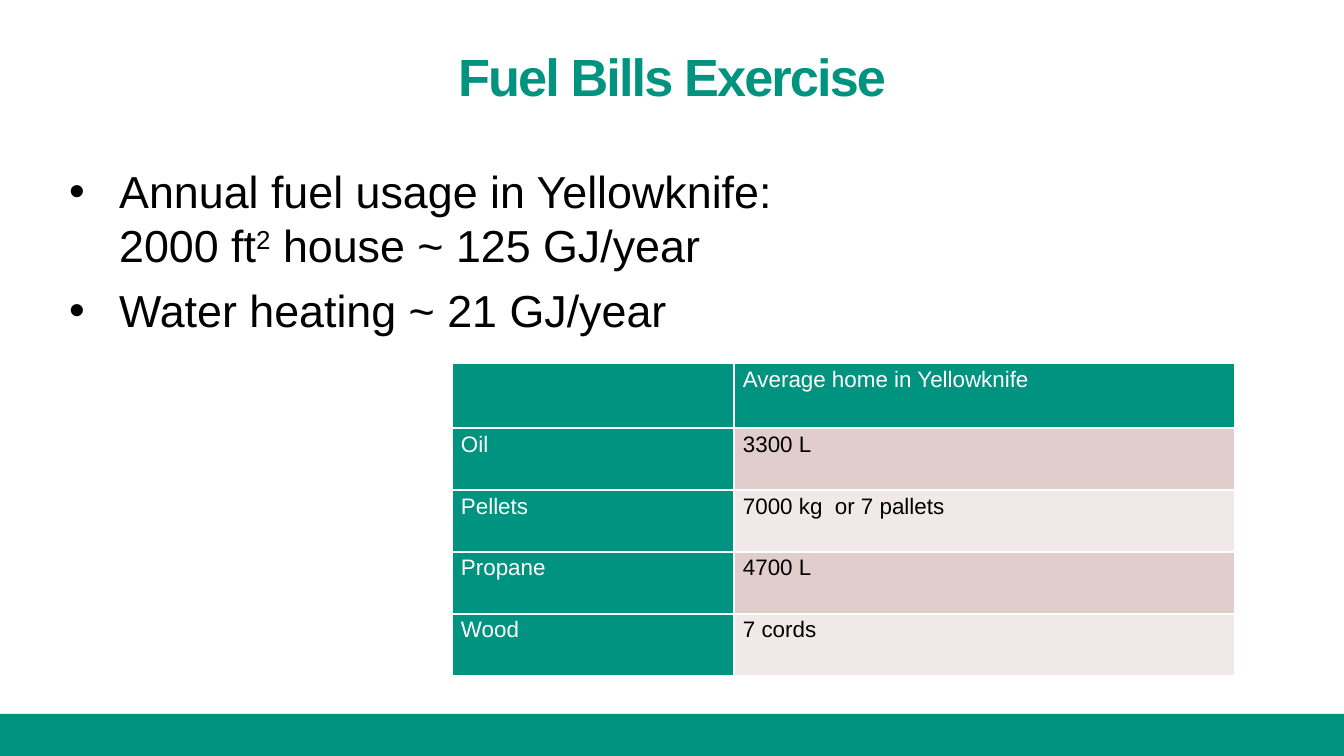
from lxml.etree import SubElement as Sub
from pptx import Presentation
from pptx.dml.color import RGBColor as RGB
from pptx.enum.shapes import MSO_SHAPE as Shape
from pptx.enum.text import MSO_ANCHOR as Anchor, PP_ALIGN as Align
from pptx.oxml.ns import qn
from pptx.util import Pt

INK = {"teal": "00937F", "white": "FFFFFF", "black": "000000",
       "rose": "E2CDCD", "pale": "F1E8E8"}
FONT = "Arial"
ROWS = [("", "Average home in Yellowknife"),
        ("Oil", "3300 L"),
        ("Pellets", "7000 kg  or 7 pallets"),
        ("Propane", "4700 L"),
        ("Wood", "7 cords")]


def px(n):
    return round(n * 914400 / 134.4)


def box(*nums):
    return [px(n) for n in nums]


def paint(fill, ink):
    fill.solid()
    fill.fore_color.rgb = RGB.from_string(INK[ink])


def write(para, text, size=24, ink="black", bold=False, track=0, base=0):
    """Add one run; a line break may stand inside the text."""
    for i, line in enumerate(text.split("\n")):
        if i:
            para.add_line_break()
        run = para.add_run()
        run.text = line
        font = run.font
        font.name, font.size, font.bold = FONT, Pt(size), bold
        font.color.rgb = RGB.from_string(INK[ink])
        if track:
            font._element.set("spc", str(track * 100))
        if base:
            font._element.set("baseline", str(base * 1000))


def add_band(slide):
    band = slide.shapes.add_shape(Shape.RECTANGLE, *box(-23, 714, 1388, 54))
    band.shadow.inherit = False
    paint(band.fill, "teal")
    band.line.fill.background()


def add_title(slide, text):
    title = slide.shapes.title
    title.left, title.top, title.width, title.height = box(112, 34, 1120, 83)
    title.text_frame.vertical_anchor = Anchor.MIDDLE
    para = title.text_frame.paragraphs[0]
    para.alignment = Align.CENTER
    write(para, text, size=28, ink="teal", bold=True, track=-1)


def add_points(slide, points):
    frame = slide.shapes.add_textbox(*box(56, 151, 997, 282)).text_frame
    frame.word_wrap = True
    frame.margin_top = px(13)
    for i, parts in enumerate(points):
        para = frame.add_paragraph() if i else frame.paragraphs[0]
        # Hanging bullet
        props = para._p.get_or_add_pPr()
        props.set("marL", str(px(50)))
        props.set("indent", str(px(-50)))
        Sub(props, qn("a:buFont")).set("typeface", FONT)
        Sub(props, qn("a:buChar")).set("char", "•")
        if i:
            para.space_before = Pt(6)
        for text, base in parts:
            write(para, text, base=base)


def edge(cell):
    """White one-point border on all four sides."""
    props = cell._tc.get_or_add_tcPr()
    for side in "LRTB":
        line = Sub(props, qn("a:ln" + side))
        line.set("w", str(Pt(1)))
        fill = Sub(line, qn("a:solidFill"))
        Sub(fill, qn("a:srgbClr")).set("val", INK["white"])


def fill_cell(cell, text, back, ink):
    edge(cell)
    paint(cell.fill, back)
    cell.margin_left = cell.margin_right = px(9)
    cell.margin_top = cell.margin_bottom = 0
    para = cell.text_frame.paragraphs[0]
    para.line_spacing = 1.15
    if text:
        write(para, text, size=12, ink=ink)


def add_grid(slide):
    grid = slide.shapes.add_table(len(ROWS), 2, *box(452, 363, 783, 313)).table
    for col, wide in zip(grid.columns, (282, 501)):
        col.width = px(wide)
    for r, row in enumerate(ROWS):
        grid.rows[r].height = px(62 if r else 65)
        for c, text in enumerate(row):
            if r and c:
                back, ink = ("rose" if r % 2 else "pale"), "black"
            else:
                back, ink = "teal", "white"
            fill_cell(grid.cell(r, c), text, back, ink)


def main():
    deck = Presentation()
    deck.slide_width, deck.slide_height = box(1344, 756)
    slide = deck.slides.add_slide(deck.slide_layouts[5])
    add_band(slide)
    add_title(slide, "Fuel Bills Exercise")
    add_points(slide, [
        [("Annual fuel usage in Yellowknife:\n2000 ft", 0), ("2", 30),
         (" house ~ 125 GJ/year", 0)],
        [("Water heating ~ 21 GJ/year", 0)],
    ])
    add_grid(slide)
    deck.save("out.pptx")


if __name__ == "__main__":
    main()
